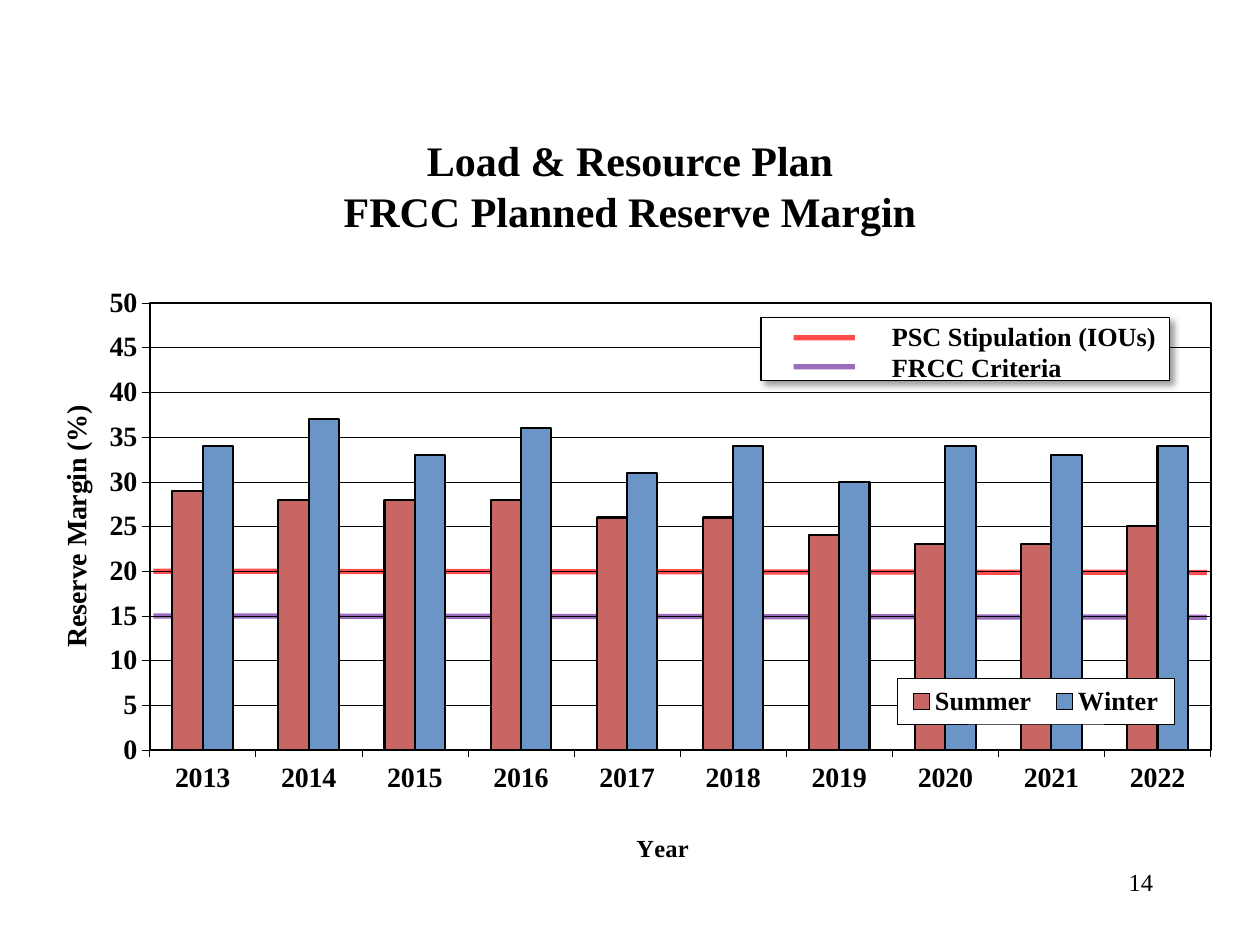
from collections import namedtuple
from dataclasses import dataclass

from lxml.etree import SubElement as Sub
from pptx import Presentation
from pptx.chart.data import CategoryChartData as Data
from pptx.dml.color import RGBColor as Rgb
from pptx.enum.chart import XL_CHART_TYPE as Kind, XL_LEGEND_POSITION as Side, XL_TICK_MARK as Tick
from pptx.enum.shapes import MSO_CONNECTOR as Link, MSO_SHAPE as Form
from pptx.enum.text import MSO_ANCHOR as Anchor, MSO_AUTO_SIZE as Fit, PP_ALIGN as Align
from pptx.oxml import parse_xml
from pptx.oxml.ns import nsdecls, qn
from pptx.util import Inches, Pt


@dataclass(frozen=True)
class Theme:
    """Colours, font and type sizes of the slide."""
    face: str = "Times New Roman"
    ink: str = "000000"
    paper: str = "FFFFFF"
    summer: str = "C86664"
    winter: str = "6B95C7"
    psc: str = "FF0000"
    frcc: str = "7030A0"
    head: float = 24
    axis: float = 16
    key: float = 15
    small: float = 14
    hair: float = 0.29
    edge: float = 1.16
    rule: float = 3


class Box(namedtuple("Box", "x y w h")):
    """A rectangle in inches."""

    def inset(self, x, y, w, h):
        """Return the inner box given as shares of this one."""
        return Box(self.x + x * self.w, self.y + y * self.h, w * self.w, h * self.h)

    def emu(self):
        """Return left, top, width and height as lengths."""
        return [Inches(v) for v in self]


T = Theme()
PAGE = Box(0, 0, 10, 7.5)
PLOT = (0.1, 0.04, 0.88, 0.69)
TOP = 50
YEARS = [str(y) for y in range(2013, 2023)]
SERIES = {
    "Summer": (T.summer, (29, 28, 28, 28, 26, 26, 24, 23, 23, 25)),
    "Winter": (T.winter, (34, 37, 33, 36, 31, 34, 30, 34, 33, 34)),
}


def style(font, size, bold=True):
    """Set the theme face, ink, size and weight of a font."""
    font.name, font.size, font.bold = T.face, Pt(size), bold
    font.color.rgb = Rgb.from_string(T.ink)


def write(shape, text, size, bold=True, align=Align.LEFT, wrap=True):
    """Write formatted text from the top of a shape."""
    frame = shape.text_frame
    frame.auto_size, frame.word_wrap = Fit.NONE, wrap
    frame.vertical_anchor = Anchor.TOP
    frame.text = text
    for par in frame.paragraphs:
        par.alignment = align
        for run in par.runs:
            style(run.font, size, bold)


def stroke(line, color, width):
    """Give a line its solid colour and width."""
    line.color.rgb, line.width = Rgb.from_string(color), Pt(width)


def rule(shapes, color, x, y, end, drop=0):
    """Draw a flat translucent line."""
    line = shapes.add_connector(Link.STRAIGHT, Inches(x), Inches(y), Inches(end), Inches(y + drop))
    stroke(line.line, color, T.rule)
    tint = line.element.spPr.find(".//" + qn("a:srgbClr"))
    Sub(tint, qn("a:alpha"), val="70000")
    Sub(line.element.spPr, qn("a:effectLst"))


def place(node, index, x, y, w=None, h=None, inner=False):
    """Fix a chart element at shares of the chart box."""
    for old in node.findall(qn("c:layout")):
        node.remove(old)
    lay = node.makeelement(qn("c:layout"))
    node.insert(index, lay)
    man = Sub(lay, qn("c:manualLayout"))
    if inner:
        Sub(man, qn("c:layoutTarget"), val="inner")
    Sub(man, qn("c:xMode"), val="edge")
    Sub(man, qn("c:yMode"), val="edge")
    for tag, val in zip("xywh", (x, y, w, h)):
        if val is not None:
            Sub(man, qn("c:" + tag), val=str(val))


def paint(fill, width=None):
    """Return chart shape properties with a fill and an optional edge."""
    def solid(color):
        return f'<a:solidFill><a:srgbClr val="{color}"/></a:solidFill>'
    body = solid(fill) if fill else "<a:noFill/>"
    edge = f'<a:ln w="{Pt(width)}">{solid(T.ink)}</a:ln>' if width else "<a:ln><a:noFill/></a:ln>"
    return parse_xml(f'<c:spPr {nsdecls("c", "a")}>{body}{edge}</c:spPr>')


def axis(item, text, size, x, y):
    """Format an axis and place its title."""
    item.major_tick_mark, item.minor_tick_mark = Tick.OUTSIDE, Tick.NONE
    style(item.tick_labels.font, T.axis)
    stroke(item.format.line, T.ink, T.hair)
    frame = item.axis_title.text_frame
    frame.text = text
    style(frame.paragraphs[0].runs[0].font, size)
    place(item.axis_title._element, 1, x, y)


def limits(shapes, box):
    """Draw the two required margins across the plot."""
    plot = box.inset(*PLOT)
    for level, color in ((15, T.frcc), (20, T.psc)):
        y = plot.y + plot.h * (1 - level / TOP)
        rule(shapes, color, plot.x + 0.03, y, plot.x + plot.w - 0.03, 0.01)


def columns(shapes, box):
    """Add the clustered column chart of reserve margins."""
    data = Data()
    data.categories = YEARS
    for name, (_, vals) in SERIES.items():
        data.add_series(name, vals)
    chart = shapes.add_chart(Kind.COLUMN_CLUSTERED, *box.emu(), data).chart
    style(chart.font, T.axis)
    chart.has_title = False
    bars = chart.plots[0]
    bars.gap_width, bars.overlap, bars.vary_by_categories = 150, 0, False
    for item, (color, _) in zip(bars.series, SERIES.values()):
        item.format.fill.solid()
        item.format.fill.fore_color.rgb = Rgb.from_string(color)
        stroke(item.format.line, T.ink, T.edge)
    axis(chart.category_axis, "Year", T.small, 0.5, 0.85)
    side = chart.value_axis
    side.minimum_scale, side.maximum_scale, side.major_unit = 0, TOP, 5
    side.has_major_gridlines = True
    stroke(side.major_gridlines.format.line, T.ink, T.hair)
    axis(side, "Reserve Margin (%)", T.axis, 0.02, 0.19)
    chart.has_legend = True
    chart.legend.position, chart.legend.include_in_layout = Side.RIGHT, False
    style(chart.legend.font, T.key)
    root = chart._chartSpace
    area = root.find(".//" + qn("c:plotArea"))
    place(area, 0, *PLOT, inner=True)
    area.append(paint(None, T.edge))
    key = root.find(".//" + qn("c:legend"))
    place(key, 1, 0.72, 0.62, 0.23, 0.07)
    key.find(qn("c:overlay")).addnext(paint(T.paper, T.hair))
    root.find(qn("c:chart")).addnext(paint(None))


def shade(shape):
    """Cast a soft shadow to the lower right."""
    shape.shadow.inherit = False
    fx = shape.element.spPr.find(qn("a:effectLst"))
    cast = Sub(fx, qn("a:outerShdw"), blurRad=str(Pt(4)), dist=str(Pt(3)), dir="2700000", algn="tl", rotWithShape="0")
    tint = Sub(cast, qn("a:srgbClr"), val=T.ink)
    Sub(tint, qn("a:alpha"), val="40000")


def legend(shapes, box):
    """Add the boxed key to the two margin lines."""
    group = shapes.add_group_shape().shapes
    card = group.add_shape(Form.RECTANGLE, *box.emu())
    card.fill.solid()
    card.fill.fore_color.rgb = Rgb.from_string(T.paper)
    stroke(card.line, T.ink, 0.75)
    shade(card)
    for row, color in enumerate((T.psc, T.frcc)):
        mark = box.inset(0.08, 0.32 + 0.46 * row, 0.15, 0)
        rule(group, color, mark.x, mark.y, mark.x + mark.w)
    note = group.add_textbox(*box.inset(0.29, -0.06, 0.83, 1.22).emu())
    write(note, "PSC Stipulation (IOUs)\vFRCC Criteria", T.key)


def title(shape, box):
    """Move and write the slide title."""
    shape.left, shape.top, shape.width, shape.height = box.emu()
    write(shape, "Load & Resource Plan\vFRCC Planned Reserve Margin", T.head, align=Align.CENTER)


def main():
    """Build and save the slide."""
    deck = Presentation()
    deck.slide_width, deck.slide_height = Inches(PAGE.w), Inches(PAGE.h)
    slide = deck.slides.add_slide(deck.slide_layouts[5])
    shapes = slide.shapes
    graph = Box(0.23, 2.2, 9.57, 5.14)
    title(shapes.title, Box(0, 1.02, PAGE.w, 1.17))
    limits(shapes, graph)
    columns(shapes, graph)
    number = shapes.add_textbox(*Box(7.17, 6.83, 2.08, 0.5).emu())
    write(number, "14", T.small, bold=False, align=Align.RIGHT)
    legend(shapes, Box(6.04, 2.52, 3.24, 0.5))
    deck.save("out.pptx")


if __name__ == "__main__":
    main()
